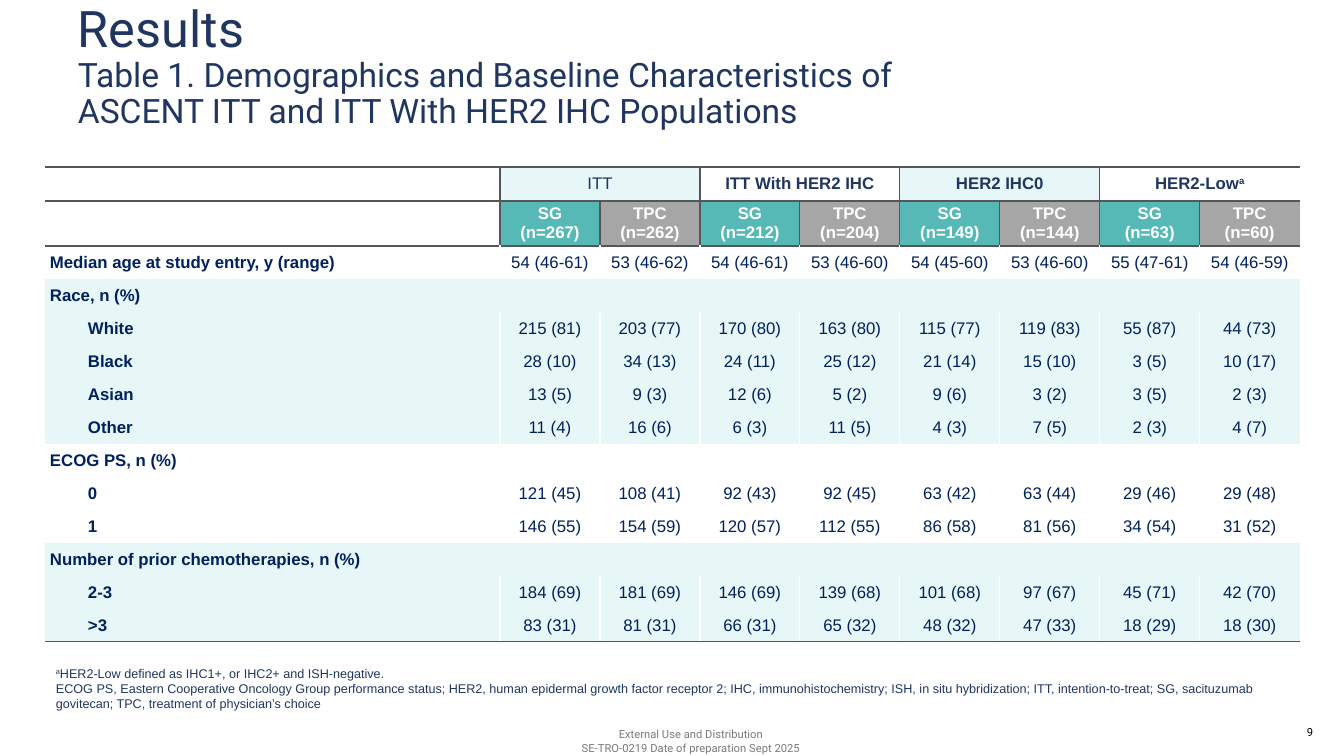
from copy import deepcopy

from lxml import etree
from pptx import Presentation
from pptx.dml.color import RGBColor
from pptx.enum.text import MSO_ANCHOR, PP_ALIGN
from pptx.oxml.ns import qn
from pptx.util import Emu, Pt

LEFT, CENTER, RIGHT = PP_ALIGN.LEFT, PP_ALIGN.CENTER, PP_ALIGN.RIGHT
MIDDLE, BOTTOM = MSO_ANCHOR.MIDDLE, MSO_ANCHOR.BOTTOM
EMU_PER_PX = 914400 / 100.8

NAVY, DATA_BLUE, GREY_TEXT = "203661", "002060", "787A7E"
WHITE, BLACK, RULE = "FFFFFF", "000000", "54565B"
PALE, TEAL, GREY = "E7F6F6", "56B9B5", "A6A6A6"

POPULATIONS = ["ITT", "ITT With HER2 IHC", "HER2 IHC0", "HER2-Low"]
ARM_SIZES = [267, 262, 212, 204, 149, 144, 63, 60]
GROUPS = [
    (WHITE, "Median age at study entry, y (range)",
     "54 (46-61)|53 (46-62)|54 (46-61)|53 (46-60)|54 (45-60)|53 (46-60)|55 (47-61)|54 (46-59)", []),
    (PALE, "Race, n (%)", "", [
        ("White", "215 (81)|203 (77)|170 (80)|163 (80)|115 (77)|119 (83)|55 (87)|44 (73)"),
        ("Black", "28 (10)|34 (13)|24 (11)|25 (12)|21 (14)|15 (10)|3 (5)|10 (17)"),
        ("Asian", "13 (5)|9 (3)|12 (6)|5 (2)|9 (6)|3 (2)|3 (5)|2 (3)"),
        ("Other", "11 (4)|16 (6)|6 (3)|11 (5)|4 (3)|7 (5)|2 (3)|4 (7)")]),
    (WHITE, "ECOG PS, n (%)", "", [
        ("0", "121 (45)|108 (41)|92 (43)|92 (45)|63 (42)|63 (44)|29 (46)|29 (48)"),
        ("1", "146 (55)|154 (59)|120 (57)|112 (55)|86 (58)|81 (56)|34 (54)|31 (52)")]),
    (PALE, "Number of prior chemotherapies, n (%)", "", [
        ("2-3", "184 (69)|181 (69)|146 (69)|139 (68)|101 (68)|97 (67)|45 (71)|42 (70)"),
        (">3", "83 (31)|81 (31)|66 (31)|65 (32)|48 (32)|47 (33)|18 (29)|18 (30)")]),
]
ROW_HEIGHTS = [34, 45] + [33] * sum(1 + len(group[3]) for group in GROUPS)
COLUMN_WIDTHS = [455] + [100] * len(ARM_SIZES)
LAST_ROW, LAST_COLUMN = len(ROW_HEIGHTS) - 1, len(COLUMN_WIDTHS) - 1


def px(length):
    return Emu(round(length * EMU_PER_PX))


def rgb(value):
    return RGBColor.from_string(value)


def add_text(paragraph, text, size=12, font="Arial", color=NAVY, bold=False, superscript=False):
    for index, line in enumerate(text.split("\n")):
        if index:
            paragraph.add_line_break()
            paragraph._p[-1].append(deepcopy(run._r.rPr))
        run = paragraph.add_run()
        run.text = line
        run.font.size = Pt(size)
        run.font.name = font
        run.font.bold = bold
        run.font.color.rgb = rgb(color)
        if superscript:
            run.font._element.set("baseline", "30000")


class SlideBuilder:
    def __init__(self):
        self.presentation = Presentation()
        self.presentation.slide_width = px(1344)
        self.presentation.slide_height = px(756)
        self.slide = self.presentation.slides.add_slide(self.presentation.slide_layouts[6])

    def text_box(self, left, top, width, height, paragraphs, anchor=MIDDLE, align=LEFT, spacing=None):
        shape = self.slide.shapes.add_textbox(px(left), px(top), px(width), px(height))
        frame = shape.text_frame
        frame.word_wrap = True
        frame.vertical_anchor = anchor
        for index, runs in enumerate(paragraphs):
            paragraph = frame.add_paragraph() if index else frame.paragraphs[0]
            paragraph.alignment = align
            paragraph.line_spacing = spacing
            for text, style in runs:
                add_text(paragraph, text, **style)

    def table(self, left, top):
        shape = self.slide.shapes.add_table(
            len(ROW_HEIGHTS), len(COLUMN_WIDTHS), px(left), px(top),
            px(sum(COLUMN_WIDTHS)), px(sum(ROW_HEIGHTS)))
        table = shape.table
        table.first_row = table.horz_banding = False
        for column, width in zip(table.columns, COLUMN_WIDTHS):
            column.width = px(width)
        for row, height in zip(table.rows, ROW_HEIGHTS):
            row.height = px(height)
        return table

    def cell(self, cell, text, fill, borders, align=CENTER, indent=0, **style):
        cell.margin_left = cell.margin_right = px(5)
        cell.margin_top = cell.margin_bottom = 0
        cell.vertical_anchor = MIDDLE
        cell.fill.solid()
        cell.fill.fore_color.rgb = rgb(fill)
        properties = cell._tc.get_or_add_tcPr()
        for index, side in enumerate("LRTB"):
            line = etree.Element(qn(f"a:ln{side}"), w=str(Pt(1)))
            if side in borders:
                solid = etree.SubElement(line, qn("a:solidFill"))
                etree.SubElement(solid, qn("a:srgbClr"), val=borders[side])
            else:
                etree.SubElement(line, qn("a:noFill"))
            properties.insert(index, line)
        paragraph = cell.text_frame.paragraphs[0]
        paragraph.alignment = align
        if indent:
            paragraph._p.get_or_add_pPr().set("marL", str(px(indent)))
        if text:
            add_text(paragraph, text, **style)
        return paragraph

    def header_rows(self, table):
        for row in (0, 1):
            self.cell(table.cell(row, 0), "", WHITE, dict.fromkeys("RTB", RULE))
        for column, patients in enumerate(ARM_SIZES, 1):
            first_arm = column % 2 == 1
            population = (column - 1) // 2
            borders = dict.fromkeys("TB" + ("L" if first_arm else ""), RULE)
            if not first_arm and column < LAST_COLUMN:
                borders["R"] = RULE
            label = POPULATIONS[population] if first_arm else ""
            paragraph = self.cell(table.cell(0, column), label, WHITE if population % 2 else PALE,
                                  borders, bold=population > 0)
            if label == "HER2-Low":
                add_text(paragraph, "a", bold=True, superscript=True)
            arm = "SG" if first_arm else "TPC"
            self.cell(table.cell(1, column), f"{arm}\n(n={patients})", TEAL if first_arm else GREY,
                      {**borders, "L": RULE, **({"R": RULE} if first_arm else {})},
                      color=WHITE, bold=True)
            if not first_arm:
                table.cell(0, column - 1).merge(table.cell(0, column))

    def data_row(self, table, row, label, values, fill, indent=0):
        texts = [label] + (values.split("|") if values else [""] * LAST_COLUMN)
        for column, text in enumerate(texts):
            borders = {}
            if values and column > 0:
                borders["L"] = WHITE
            if values and column < LAST_COLUMN:
                borders["R"] = WHITE
            if row == 2:
                borders["T"] = RULE
            if row == LAST_ROW:
                borders["B"] = RULE
            is_label = column == 0
            self.cell(table.cell(row, column), text, fill, borders,
                      align=LEFT if is_label else CENTER, indent=indent if is_label else 0,
                      color=DATA_BLUE, bold=is_label)
        if not values:
            table.cell(row, 0).merge(table.cell(row, LAST_COLUMN))


def main():
    builder = SlideBuilder()
    footer = {"size": 8, "font": "Roboto", "color": GREY_TEXT}
    title = {"font": "Roboto", "color": NAVY}
    note = {"size": 9}

    builder.text_box(518, 725, 346, 32, [
        [("External Use and Distribution", footer)],
        [("SE-TRO-0219 Date of preparation Sept 2025", footer)]], align=CENTER)
    builder.text_box(68, 15, 1205, 121, [[
        ("Results\n", {**title, "size": 36}),
        ("Table 1. Demographics and Baseline Characteristics of\n"
         "ASCENT ITT and ITT With HER2 IHC Populations", {**title, "size": 24})]],
        anchor=BOTTOM, spacing=0.9)
    builder.text_box(1010, 712, 313, 40, [[("9", {**footer, "color": BLACK})]], align=RIGHT)
    builder.text_box(46, 642, 1251, 74, [
        [("a", {**note, "superscript": True}),
         ("HER2-Low defined as IHC1+, or IHC2+ and ISH-negative.", note)],
        [("ECOG PS, Eastern Cooperative Oncology Group performance status; HER2, human epidermal "
          "growth factor receptor 2; IHC, immunohistochemistry; ISH, in situ hybridization; ITT, "
          "intention-to-treat; SG, sacituzumab govitecan; TPC, treatment of physician’s choice", note)]],
        anchor=BOTTOM)

    table = builder.table(45, 167)
    builder.header_rows(table)
    row = 2
    for fill, heading, values, members in GROUPS:
        builder.data_row(table, row, heading, values, fill)
        for offset, (label, member_values) in enumerate(members, 1):
            builder.data_row(table, row + offset, label, member_values, fill, indent=38)
        row += 1 + len(members)

    builder.presentation.save("out.pptx")


if __name__ == "__main__":
    main()
